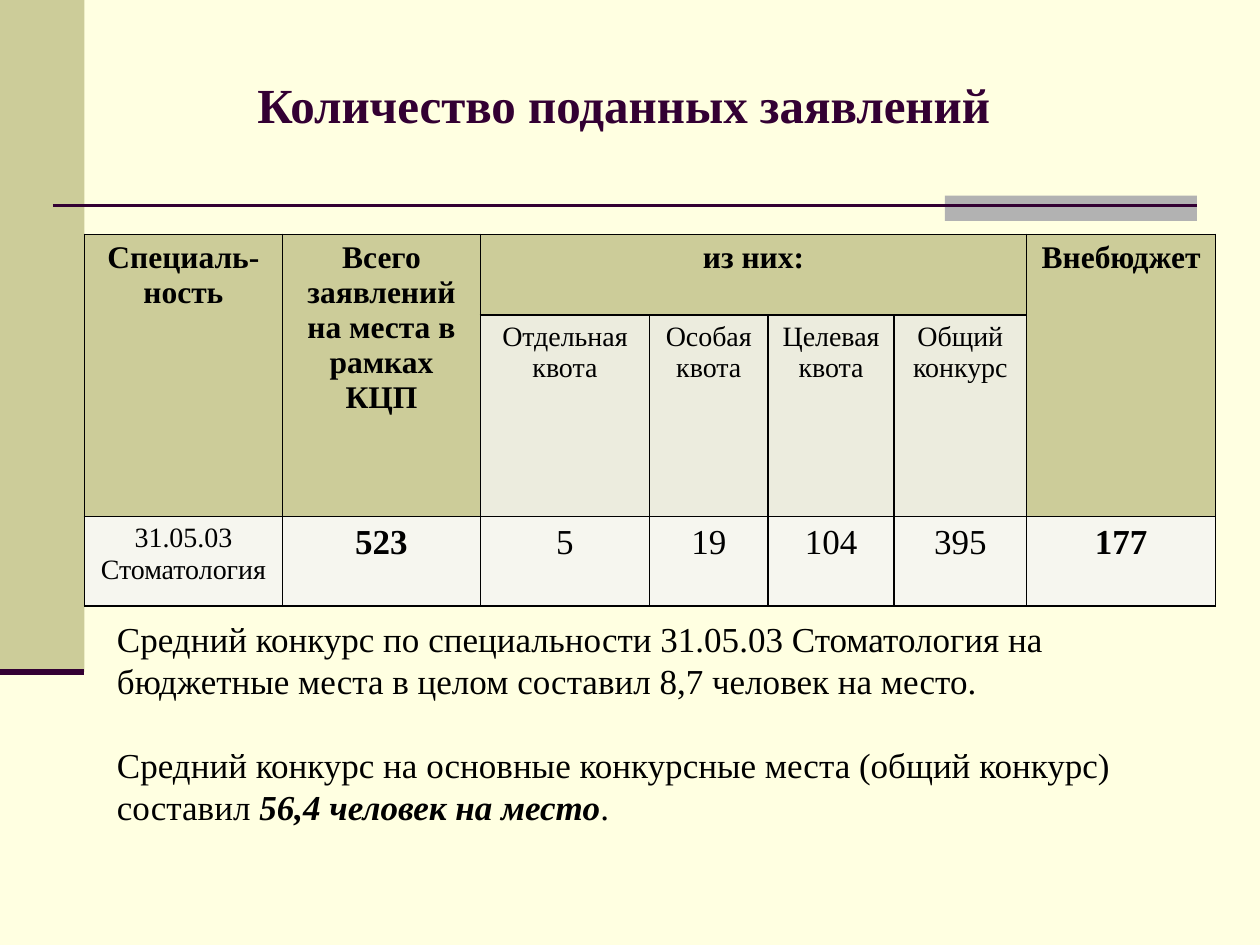
from lxml import etree
from pptx import Presentation
from pptx.dml.color import RGBColor
from pptx.enum.shapes import MSO_CONNECTOR, MSO_SHAPE
from pptx.enum.text import MSO_ANCHOR, PP_ALIGN
from pptx.oxml.ns import qn
from pptx.util import Inches, Pt

RECT, STRAIGHT = MSO_SHAPE.RECTANGLE, MSO_CONNECTOR.STRAIGHT
CENTER, LEFT = PP_ALIGN.CENTER, PP_ALIGN.LEFT
MIDDLE, TOP = MSO_ANCHOR.MIDDLE, MSO_ANCHOR.TOP

W, H = 10, 7.5
FONT = "Times New Roman"
CREAM, KHAKI, GREY, PLUM, BLACK = "FFFFE1", "CCCC99", "B2B2B2", "330033", "000000"
SUBHEAD_FILL, DATA_FILL = "ECECDE", "F6F6EF"

HEAD = {"size": Pt(18), "bold": True}
SUBHEAD = {"size": Pt(16), "bold": False}
NUMBER = {"size": Pt(20), "bold": False}
TOTAL = {"size": Pt(20), "bold": True}
TITLE = {"size": Pt(28), "bold": True}
BODY = {"size": Pt(20)}
STRESS = {"size": Pt(20), "bold": True, "italic": True}

COLS = [1.57, 1.57, 1.34, 0.94, 1, 1.05, 1.5]
ROWS = [0.64, 0.96, 0.71]
# row, column, rows spanned, columns spanned, paragraphs, fill, format
CELLS = [
    (0, 0, 2, 1, ["Специаль-", "ность"], KHAKI, HEAD),
    (0, 1, 2, 1, ["Всего заявлений на места в рамках КЦП"], KHAKI, HEAD),
    (0, 2, 1, 4, ["из них:"], KHAKI, HEAD),
    (0, 6, 2, 1, ["Внебюджет"], KHAKI, HEAD),
    *[(1, c, 1, 1, [text], SUBHEAD_FILL, SUBHEAD) for c, text in enumerate(
        ["Отдельная квота", "Особая квота", "Целевая квота", "Общий конкурс"], 2)],
    (2, 0, 1, 1, ["31.05.03 Стоматология"], DATA_FILL, SUBHEAD),
    *[(2, c, 1, 1, [text], DATA_FILL, TOTAL if c in (1, 6) else NUMBER)
      for c, text in enumerate(["523", "5", "19", "104", "395", "177"], 1)],
]
SUMMARY = [
    [("Средний конкурс по специальности 31.05.03 Стоматология на бюджетные места "
      "в целом составил 8,7 человек на место.", BODY)],
    [("Средний конкурс на основные конкурсные места (общий конкурс) составил ", BODY),
     ("56,4 человек на место", STRESS), (".", BODY)],
]


def rgb(value):
    return RGBColor.from_string(value)


def share(x, y, w, h):
    """Turn shares of the slide into a box."""
    return [Inches(v) for v in (x * W, y * H, w * W, h * H)]


def write(tf, paragraphs, color=BLACK, align=LEFT, gap=0):
    for i, runs in enumerate(paragraphs):
        p = tf.add_paragraph() if i else tf.paragraphs[0]
        p.alignment = align
        if i and gap:
            p.space_before = Pt(gap)
        for text, fmt in runs:
            r = p.add_run()
            r.text = text
            r.font.name = FONT
            r.font.color.rgb = rgb(color)
            for name, value in fmt.items():
                setattr(r.font, name, value)


def add_block(s, box, color):
    sp = s.shapes.add_shape(RECT, *box)
    sp.shadow.inherit = False
    sp.fill.solid()
    sp.fill.fore_color.rgb = rgb(color)
    sp.line.fill.background()


def add_rule(s, box, width):
    x, y, w, h = box
    line = s.shapes.add_connector(STRAIGHT, x, y, x + w, y + h)
    line.line.color.rgb = rgb(PLUM)
    line.line.width = Pt(width)
    etree.SubElement(line._element.spPr, qn("a:effectLst"))


def add_text(s, box, paragraphs, anchor=TOP, **style):
    tf = s.shapes.add_textbox(*box).text_frame
    tf.word_wrap = True
    tf.vertical_anchor = anchor
    write(tf, paragraphs, **style)


def add_frame(s):
    s.background.fill.solid()
    s.background.fill.fore_color.rgb = rgb(CREAM)
    # Side band, accent under the title, and their rules
    add_block(s, share(0, 0, 0.067, 0.711), KHAKI)
    add_block(s, share(0.75, 0.207, 0.2, 0.0267), GREY)
    add_rule(s, share(0.042, 0.2175, 0.908, 0), 1.5)
    add_rule(s, share(0, 0.711, 0.067, 0), 3.5)


def add_borders(cell):
    tc_pr = cell._tc.get_or_add_tcPr()
    for i, side in enumerate(("a:lnL", "a:lnR", "a:lnT", "a:lnB")):
        ln = etree.Element(qn(side), w=str(Pt(1)))
        fill = etree.SubElement(ln, qn("a:solidFill"))
        etree.SubElement(fill, qn("a:srgbClr"), val=BLACK)
        tc_pr.insert(i, ln)


def add_applications(s, box):
    table = s.shapes.add_table(len(ROWS), len(COLS), *box).table
    table.first_row = table.horz_banding = False
    for col, width in zip(table.columns, COLS):
        col.width = int(box[2] * width / sum(COLS))
    for row, height in zip(table.rows, ROWS):
        row.height = int(box[3] * height / sum(ROWS))
    for r, c, down, across, lines, fill, fmt in CELLS:
        cell = table.cell(r, c)
        if down * across > 1:
            cell.merge(table.cell(r + down - 1, c + across - 1))
        for i in range(r, r + down):
            for j in range(c, c + across):
                part = table.cell(i, j)
                part.fill.solid()
                part.fill.fore_color.rgb = rgb(fill)
                add_borders(part)
        write(cell.text_frame, [[(line, fmt)] for line in lines], align=CENTER)


def main():
    prs = Presentation()
    prs.slide_width, prs.slide_height = Inches(W), Inches(H)
    s = prs.slides.add_slide(prs.slide_layouts[6])
    add_frame(s)
    add_text(s, share(0.078, 0.052, 0.834, 0.115),
             [[("Количество поданных заявлений", TITLE)]],
             anchor=MIDDLE, color=PLUM, align=CENTER)
    add_applications(s, share(0.067, 0.248, 0.898, 0.308))
    add_text(s, share(0.083, 0.647, 0.882, 0.301), SUMMARY, gap=24)
    prs.save("out.pptx")


if __name__ == "__main__":
    main()
